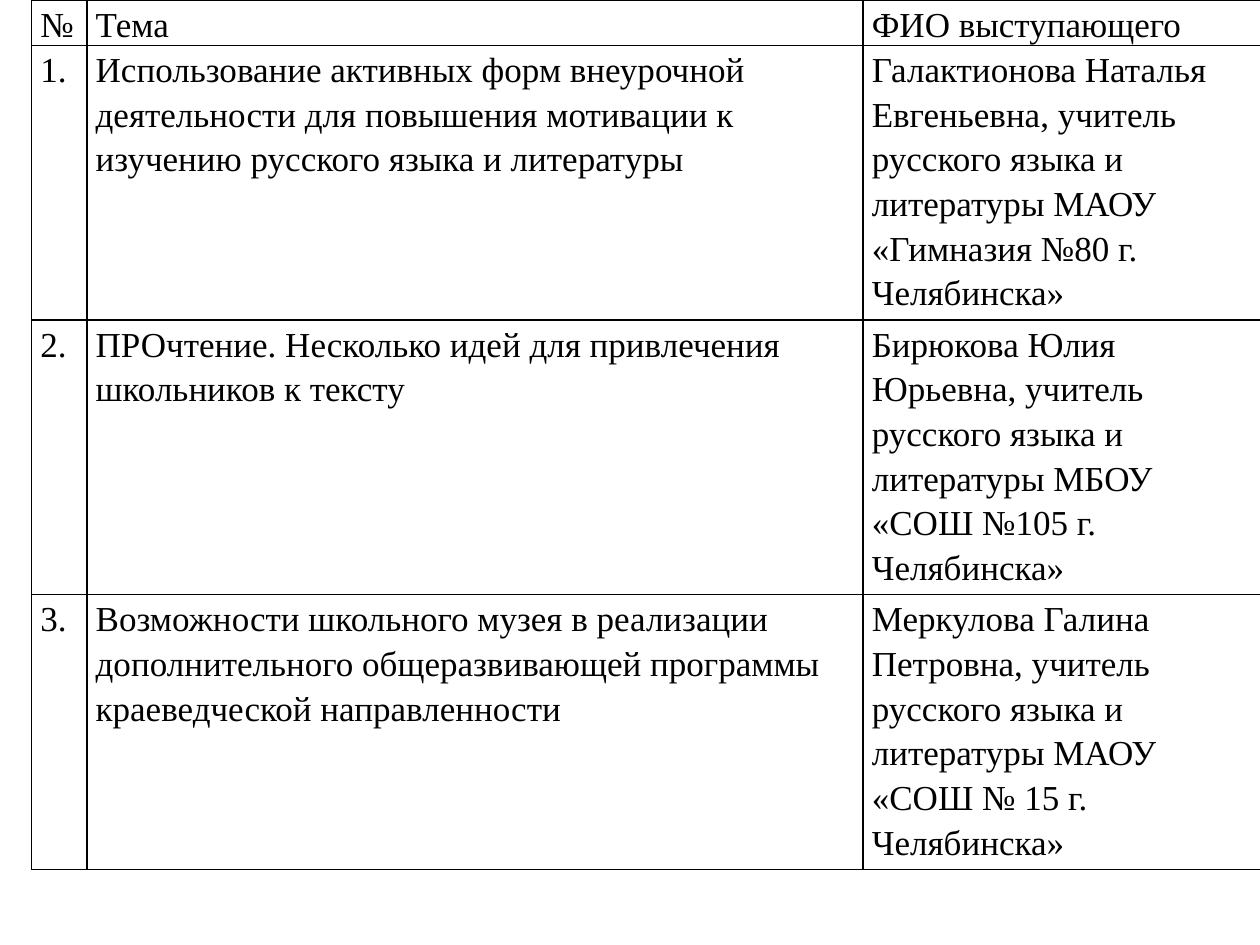
import pptx
import pptx.util
import pptx.dml.color
import pptx.oxml
import pptx.oxml.ns

COLORS = {"text": "000000", "border": "000000", "page": "FFFFFF"}
FONT = "Times New Roman"
COLUMN_WIDTHS = [0.44, 6.16, 3.16]
HEADER_HEIGHT = 0.36
TALK_HEIGHT = 2.18
HEADERS = ["№", "Тема", "ФИО выступающего"]
TALKS = [
    ("Использование активных форм внеурочной деятельности для повышения "
     "мотивации к изучению русского языка и литературы",
     "Галактионова Наталья Евгеньевна, учитель русского языка и "
     "литературы МАОУ «Гимназия №80 г. Челябинска»"),
    ("ПРОчтение. Несколько идей для привлечения школьников к тексту",
     "Бирюкова Юлия \nЮрьевна, учитель русского языка и "
     "литературы МБОУ «СОШ №105 г. Челябинска»"),
    ("Возможности школьного музея в реализации дополнительного "
     "общеразвивающей программы краеведческой направленности",
     "Меркулова Галина \nПетровна, учитель русского языка и "
     "литературы МАОУ «СОШ № 15 г. Челябинска»"),
]


def color(name):
    return pptx.dml.color.RGBColor.from_string(COLORS[name])


def add_borders(cell):
    properties = cell._tc.get_or_add_tcPr()
    for position, side in enumerate(("lnL", "lnR", "lnT", "lnB")):
        line = pptx.oxml.parse_xml(
            f'<a:{side} {pptx.oxml.ns.nsdecls("a")} w="{pptx.util.Pt(1)}">'
            f'<a:solidFill><a:srgbClr val="{COLORS["border"]}"/></a:solidFill>'
            f'</a:{side}>')
        properties.insert(position, line)


def fill_cell(cell, text):
    cell.margin_left = cell.margin_right = pptx.util.Inches(0.07)
    cell.margin_top = cell.margin_bottom = 0
    cell.fill.background()
    add_borders(cell)
    para = cell.text_frame.paragraphs[0]
    para.text = text
    para.line_spacing = 1.15
    para.font.name = FONT
    para.font.size = pptx.util.Pt(20)
    para.font.color.rgb = color("text")


def add_schedule(page, rows):
    heights = [HEADER_HEIGHT] + [TALK_HEIGHT] * (len(rows) - 1)
    table = page.shapes.add_table(
        len(rows), len(COLUMN_WIDTHS), pptx.util.Inches(0.25), 0,
        pptx.util.Inches(sum(COLUMN_WIDTHS)),
        pptx.util.Inches(sum(heights))).table
    table.first_row = False
    table.horz_banding = False
    for column, width in zip(table.columns, COLUMN_WIDTHS):
        column.width = pptx.util.Inches(width)
    for row, height, texts in zip(table.rows, heights, rows):
        row.height = pptx.util.Inches(height)
        for cell, text in zip(row.cells, texts):
            fill_cell(cell, text)


def main():
    deck = pptx.Presentation()
    deck.slide_width = pptx.util.Inches(10)
    deck.slide_height = pptx.util.Inches(7.5)
    page = deck.slides.add_slide(deck.slide_layouts[6])
    page.background.fill.solid()
    page.background.fill.fore_color.rgb = color("page")
    talks = [(f"{number}.", *talk) for number, talk in enumerate(TALKS, 1)]
    add_schedule(page, [HEADERS] + talks)
    deck.save("out.pptx")


if __name__ == "__main__":
    main()
